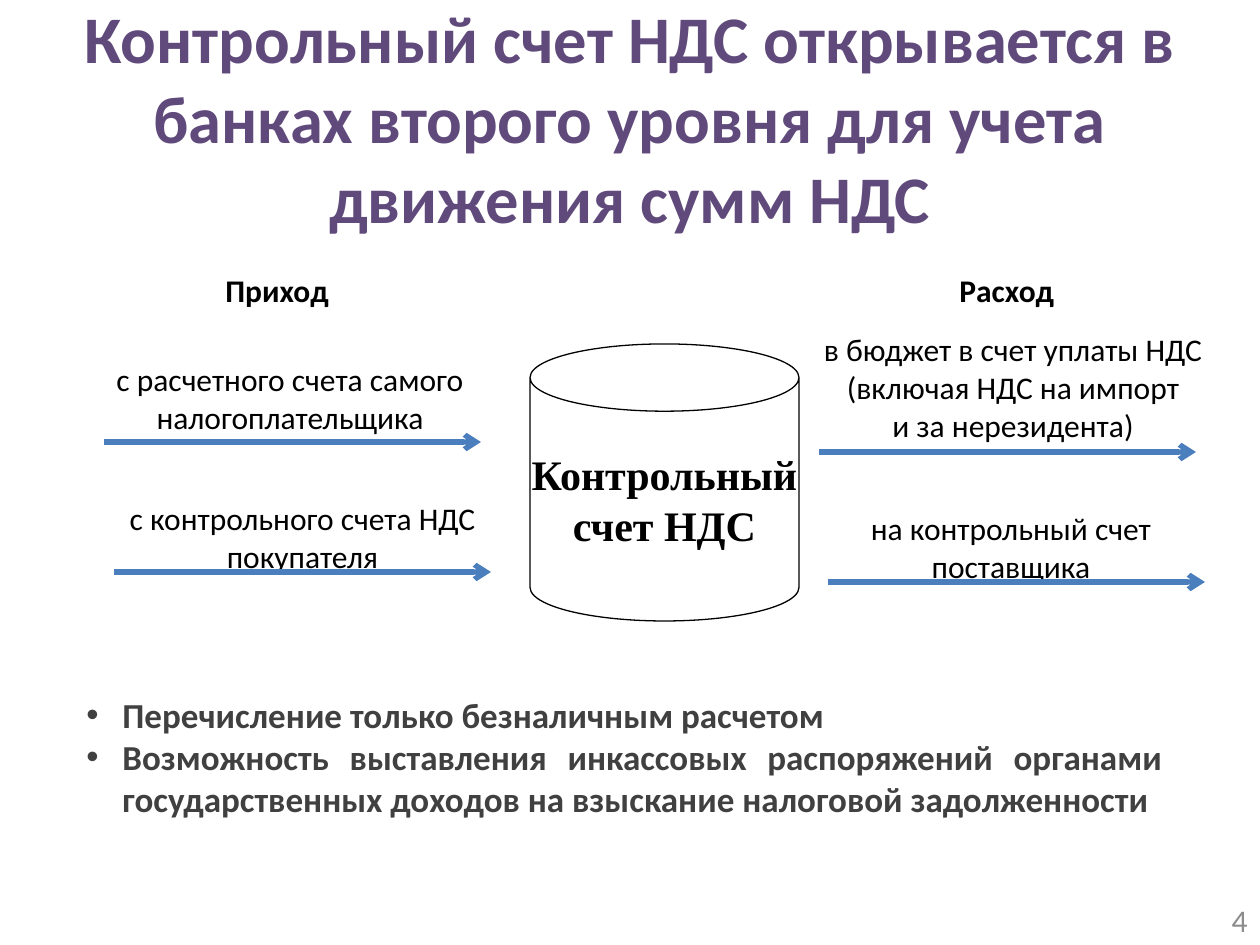
from lxml import etree
from pptx import Presentation
from pptx.dml.color import RGBColor
from pptx.enum.shapes import MSO_CONNECTOR, MSO_SHAPE
from pptx.enum.text import MSO_ANCHOR, MSO_AUTO_SIZE, PP_ALIGN
from pptx.oxml.ns import qn
from pptx.util import Emu, Pt

LEFT, CENTER, RIGHT, JUSTIFY = (PP_ALIGN.LEFT, PP_ALIGN.CENTER,
                                PP_ALIGN.RIGHT, PP_ALIGN.JUSTIFY)
MIDDLE, TOP = MSO_ANCHOR.MIDDLE, MSO_ANCHOR.TOP
GROW, FIXED = MSO_AUTO_SIZE.SHAPE_TO_FIT_TEXT, MSO_AUTO_SIZE.NONE
STRAIGHT, CAN = MSO_CONNECTOR.STRAIGHT, MSO_SHAPE.CAN

PX_PER_INCH = 126
COLORS = {"title": "604A7B", "text": "000000", "notes": "404040",
          "number": "8C8C8C", "arrow": "4B7EBC", "can": "FFFFFF"}
ARROW_LENGTH = 377


def px(value):
    return Emu(round(value * 914400 / PX_PER_INCH))


def rgb(name):
    return RGBColor.from_string(COLORS[name])


def write(frame, lines, color, size, bold=False, font="Calibri",
          aligns=(CENTER,), **frame_format):
    """Fill a text frame; the last alignment serves all remaining lines."""
    for attribute, value in frame_format.items():
        setattr(frame, attribute, value)
    for index, line in enumerate(lines):
        paragraph = frame.paragraphs[0] if index == 0 else frame.add_paragraph()
        paragraph.alignment = aligns[min(index, len(aligns) - 1)]
        run = paragraph.add_run()
        run.text = line
        for attribute, value in {"name": font, "size": Pt(size), "bold": bold}.items():
            setattr(run.font, attribute, value)
        run.font.color.rgb = rgb(color)


def add_label(slide, box, lines, color="text", size=18, **text_format):
    frame = slide.shapes.add_textbox(*map(px, box)).text_frame
    settings = {"word_wrap": False, "auto_size": GROW, "vertical_anchor": TOP}
    write(frame, lines, color, size, **{**settings, **text_format})
    return frame


def add_title(slide, box, text):
    title = slide.shapes.title
    title.left, title.top, title.width, title.height = map(px, box)
    write(title.text_frame, [text], "title", 38, bold=True,
          word_wrap=True, auto_size=FIXED, vertical_anchor=MIDDLE)


def add_arrow(slide, left, top):
    arrow = slide.shapes.add_connector(
        STRAIGHT, px(left), px(top), px(left + ARROW_LENGTH), px(top))
    arrow.line.color.rgb = rgb("arrow")
    arrow.line.width = Pt(3)
    etree.SubElement(arrow.line._get_or_add_ln(), qn("a:tailEnd"), type="arrow")
    etree.SubElement(arrow._element.spPr, qn("a:effectLst"))


def add_flow_column(slide, box, heading, heading_box, flows):
    """A heading above labelled arrows, all relative to the column box."""
    left, top = box[:2]

    def place(x, y, width, height):
        return left + x, top + y, width, height

    add_label(slide, place(*heading_box), [heading], bold=True, aligns=(LEFT,))
    for label_box, lines, aligns, (arrow_x, arrow_y) in flows:
        add_label(slide, place(*label_box), lines, aligns=aligns)
        add_arrow(slide, left + arrow_x, top + arrow_y)


def add_account(slide, box, lines):
    can = slide.shapes.add_shape(CAN, *map(px, box))
    can.adjustments[0] = 0.25
    can.shadow.inherit = False
    can.fill.solid()
    can.fill.fore_color.rgb = rgb("can")
    can.line.color.rgb = rgb("text")
    can.line.width = Pt(0.75)
    write(can.text_frame, lines, "text", 24, bold=True, font="Times New Roman",
          word_wrap=False, vertical_anchor=MIDDLE)


def add_notes_list(slide, box, lines):
    frame = add_label(slide, box, lines, "notes", 20, bold=True,
                      aligns=(JUSTIFY,), word_wrap=True)
    indent = px(36)
    for paragraph in frame.paragraphs:
        properties = paragraph._p.get_or_add_pPr()
        properties.set("marL", str(indent))
        properties.set("indent", str(-indent))
        etree.SubElement(properties, qn("a:buFont"), typeface="Arial")
        etree.SubElement(properties, qn("a:buChar"), char="•")


def main():
    deck = Presentation()
    deck.slide_width, deck.slide_height = px(1260), px(945)
    slide = deck.slides.add_slide(deck.slide_layouts[5])

    add_title(slide, (0, 38, 1260, 158),
              "Контрольный счет НДС открывается в банках второго уровня "
              "для учета движения сумм НДС")

    # Account in the middle, incoming flows left, outgoing flows right
    add_account(slide, (530, 344, 269, 277), ["Контрольный", "счет НДС"])
    add_flow_column(slide, (104, 265, 390, 317), "Приход", (109, 0, 136, 50), [
        ((0, 89, 385, 89), ["с расчетного счета самого", "налогоплательщика"],
         (LEFT, CENTER), (0, 177)),
        ((7, 228, 383, 89), ["с контрольного счета НДС", "покупателя"],
         (CENTER,), (10, 307)),
    ])
    add_flow_column(slide, (809, 265, 408, 327), "Расход", (138, 0, 120, 50), [
        ((0, 59, 408, 127), ["в бюджет в счет уплаты НДС", "(включая НДС на импорт",
                             "и за нерезидента)"], (CENTER,), (10, 187)),
        ((44, 238, 316, 89), ["на контрольный счет", "поставщика"],
         (CENTER,), (19, 317)),
    ])

    # Conditions and slide number
    add_notes_list(slide, (74, 687, 1101, 183), [
        "Перечисление только безналичным расчетом",
        "Возможность выставления инкассовых распоряжений органами "
        "государственных доходов на взыскание налоговой задолженности",
    ])
    add_label(slide, (966, 895, 294, 50), ["4"], "number", aligns=(RIGHT,),
              word_wrap=True, auto_size=FIXED, vertical_anchor=MIDDLE)

    deck.save("out.pptx")


if __name__ == "__main__":
    main()
